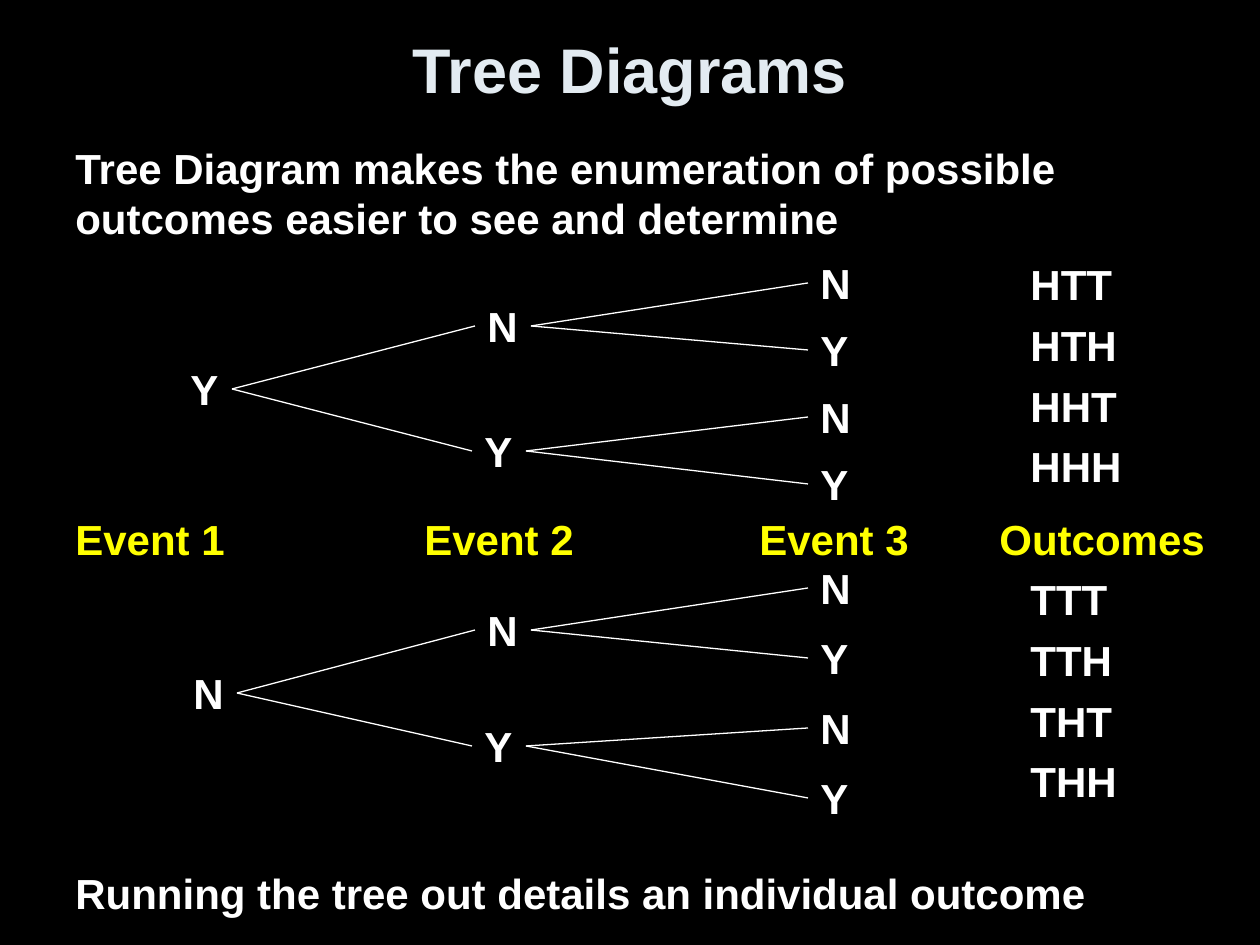
from pptx import Presentation
from pptx.dml.color import RGBColor
from pptx.enum.shapes import MSO_CONNECTOR
from pptx.enum.text import MSO_ANCHOR, MSO_AUTO_SIZE, PP_ALIGN
from pptx.oxml.ns import qn
from pptx.util import Pt
from lxml import etree

STRAIGHT = MSO_CONNECTOR.STRAIGHT
MIDDLE = MSO_ANCHOR.MIDDLE
GROW = MSO_AUTO_SIZE.SHAPE_TO_FIT_TEXT
CENTER = PP_ALIGN.CENTER

EMU_PER_PX = 914400 / 126
COLORS = {
    "background": "000000",
    "title": "E3EBF1",
    "text": "FFFFFF",
    "header": "FFFF00",
}
NODE_HEIGHT = 64
NODE_WIDTH = {"Y": 54, "N": 56}
LEAF_X = 808

# label, left, width
HEADERS = [
    ("Event 1", 63, 176),
    ("Event 2", 412, 176),
    ("Event 3", 747, 176),
    ("Outcomes", 987, 233),
]
# root and branches: label, left, middle
TREES = [
    {"root": ("Y", 178, 389),
     "branches": [("N", 475, 326), ("Y", 472, 451)],
     "leaf_top": 283, "leaf_step": 67,
     "outcomes": ["HTT", "HTH", "HHT", "HHH"], "outcomes_box": (1018, 252, 117, 248)},
    {"root": ("N", 181, 693),
     "branches": [("N", 475, 630), ("Y", 472, 746)],
     "leaf_top": 588, "leaf_step": 70,
     "outcomes": ["TTT", "TTH", "THT", "THH"], "outcomes_box": (1018, 567, 112, 248)},
]


def px(n):
    return round(n * EMU_PER_PX)


def rgb(name):
    return RGBColor.from_string(COLORS[name])


def add_text(slide, lines, box, color="text", size=24, wrap=False, **frame):
    """Add a bold text box with one paragraph per line."""
    tf = slide.shapes.add_textbox(*map(px, box)).text_frame
    tf.word_wrap = wrap
    if not wrap:
        tf.auto_size = GROW
    for name, value in frame.items():
        setattr(tf, name, value)
    for i, line in enumerate(lines):
        p = tf.paragraphs[0] if i == 0 else tf.add_paragraph()
        if i:
            p.space_before = Pt(6)
        r = p.add_run()
        r.text = line
        font = {"name": "Arial", "size": Pt(size), "bold": True}
        for name, value in font.items():
            setattr(r.font, name, value)
        r.font.color.rgb = rgb(color)
    return tf


def add_node(slide, label, left, middle):
    box = (left, middle - NODE_HEIGHT // 2, NODE_WIDTH[label], NODE_HEIGHT)
    add_text(slide, [label], box)


def add_branch(slide, parent, child):
    """Join the right edge of one node to the left edge of the next."""
    label, left, middle = parent
    ends = (left + NODE_WIDTH[label], middle, child[1], child[2])
    line = slide.shapes.add_connector(STRAIGHT, *map(px, ends))
    line.line.color.rgb = rgb("text")
    line.line.width = Pt(0.75)
    etree.SubElement(line._element.spPr, qn("a:effectLst"))


def add_tree(slide, tree):
    root = tree["root"]
    add_node(slide, *root)
    for i, branch in enumerate(tree["branches"]):
        add_node(slide, *branch)
        add_branch(slide, root, branch)
        for j, label in enumerate("NY"):
            middle = tree["leaf_top"] + (2 * i + j) * tree["leaf_step"]
            leaf = (label, LEAF_X, middle)
            add_node(slide, *leaf)
            add_branch(slide, branch, leaf)
    add_text(slide, tree["outcomes"], tree["outcomes_box"])


def main():
    prs = Presentation()
    prs.slide_width, prs.slide_height = px(1260), px(945)
    s = prs.slides.add_slide(prs.slide_layouts[6])
    s.background.fill.solid()
    s.background.fill.fore_color.rgb = rgb("background")

    title = add_text(s, ["Tree Diagrams"], (63, 3, 1134, 130), "title", 36,
                     wrap=True, vertical_anchor=MIDDLE)
    title.paragraphs[0].alignment = CENTER
    add_text(s, ["Tree Diagram makes the enumeration of possible "
                 "outcomes easier to see and determine"],
             (63, 136, 1134, 136), wrap=True)
    for label, left, width in HEADERS:
        add_text(s, [label], (left, 507, width, 63), "header")
    for tree in TREES:
        add_tree(s, tree)
    add_text(s, ["Running the tree out details an individual outcome"],
             (63, 861, 1134, 63), wrap=True)
    prs.save("out.pptx")


if __name__ == "__main__":
    main()
